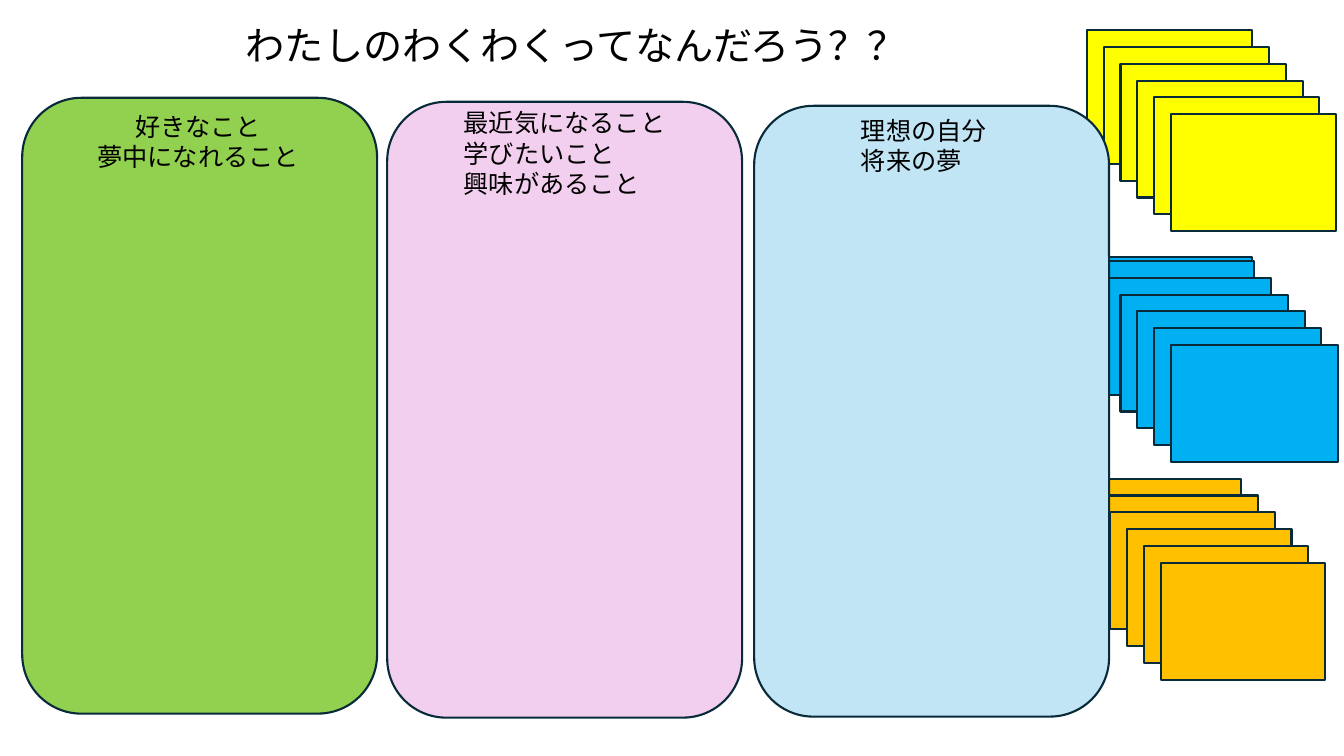
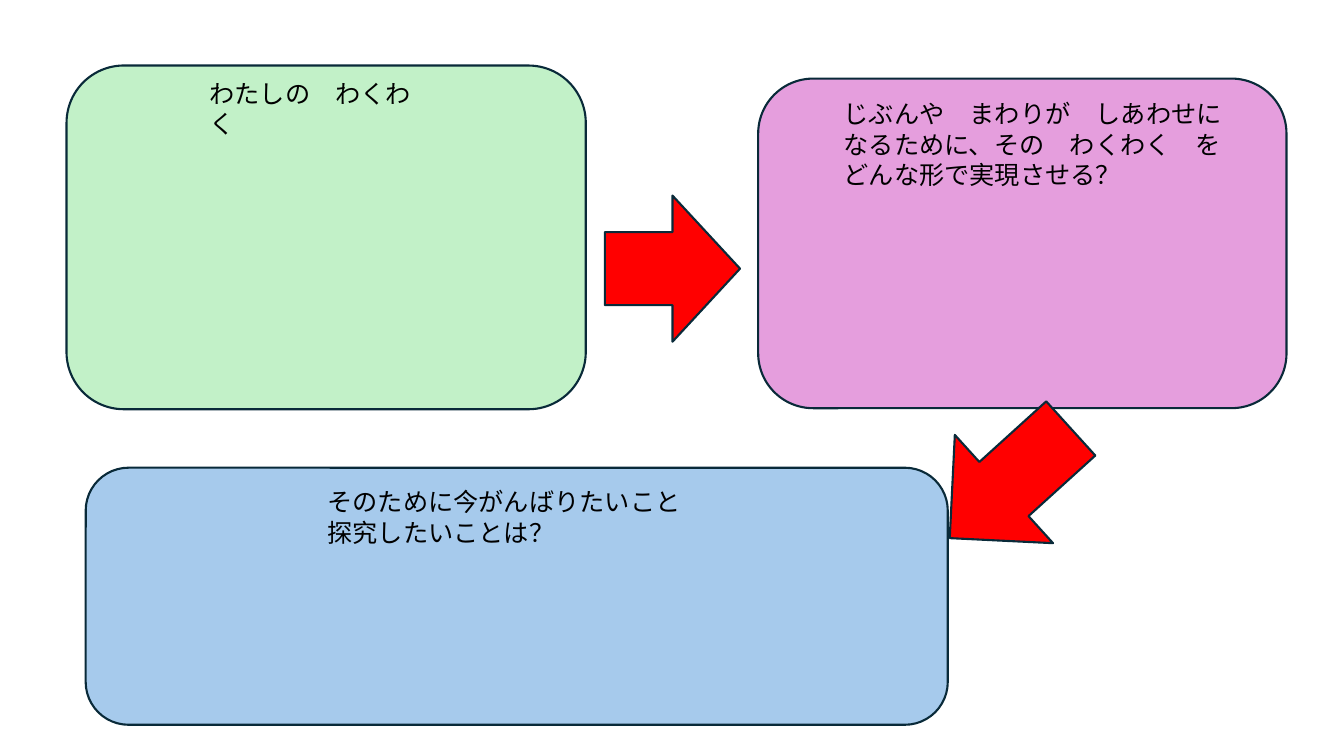
from dataclasses import dataclass

from lxml import etree
from pptx import Presentation
from pptx.dml.color import RGBColor
from pptx.enum import shapes, text
from pptx.oxml import ns
from pptx.util import Inches, Pt


@dataclass(frozen=True)
class Theme:
    font: str = "Noto Sans CJK JP"
    ink: str = "000000"
    outline: str = "092A39"
    outline_width: float = 1.5
    title_size: int = 28
    body_size: int = 18
    lime: str = "92D050"
    pink: str = "F2CFEE"
    sky: str = "C1E5F5"
    mint: str = "C2F1C8"
    orchid: str = "E59EDD"
    blue: str = "A6CAEC"
    arrow: str = "FF0000"
    yellow_card: str = "FFFF00"
    blue_card: str = "00B0F0"
    orange_card: str = "FFC000"


THEME = Theme()
PRESET = shapes.MSO_SHAPE
LEFT, CENTER = text.PP_ALIGN.LEFT, text.PP_ALIGN.CENTER


def add_outlined(slide, preset, box, fill, rotation=0):
    """Add a filled shape with the shared dark outline."""
    shape = slide.shapes.add_shape(preset, *map(Inches, box))
    shape.shadow.inherit = False
    shape.fill.solid()
    shape.fill.fore_color.rgb = RGBColor.from_string(fill)
    shape.line.color.rgb = RGBColor.from_string(THEME.outline)
    shape.line.width = Pt(THEME.outline_width)
    shape.rotation = rotation


def add_caption(slide, box, lines, size=THEME.body_size, align=LEFT):
    """Add wrapped text, one paragraph for each line."""
    frame = slide.shapes.add_textbox(*map(Inches, box)).text_frame
    frame.word_wrap = True
    frame.text = "\n".join(lines)
    for paragraph in frame.paragraphs:
        paragraph.alignment = align
        for run in paragraph.runs:
            run.font.name = THEME.font
            run.font.size = Pt(size)
            run.font.color.rgb = RGBColor.from_string(THEME.ink)
            # Japanese glyphs take the East Asian typeface
            east_asian = etree.SubElement(run.font._element, ns.qn("a:ea"))
            east_asian.set("typeface", THEME.font)


def add_panel(slide, box, fill, caption_box, lines, align=LEFT):
    """Add a rounded panel; caption_box is measured from its corner."""
    add_outlined(slide, PRESET.ROUNDED_RECTANGLE, box, fill)
    left, top, width, height = caption_box
    add_caption(slide, (box[0] + left, box[1] + top, width, height), lines, align=align)


def add_card_stack(slide, box, fill, count=6, step=1 / 6):
    """Add cards that step down and right from the first box."""
    left, top, width, height = box
    for index in range(count):
        shift = index * step
        add_outlined(slide, PRESET.RECTANGLE, (left + shift, top + shift, width, height), fill)


def build_interests(slide):
    # Card stacks, partly behind the right panel
    add_card_stack(slide, (10.78, 0.3, 1.64, 1.16), THEME.yellow_card)
    add_card_stack(slide, (10.76, 2.55, 1.66, 1.16), THEME.blue_card, count=1)
    add_card_stack(slide, (10.78, 2.59, 1.66, 1.16), THEME.blue_card)
    add_card_stack(slide, (10.68, 4.75, 1.63, 1.16), THEME.orange_card)

    # Three question panels
    add_panel(slide, (0.22, 0.97, 3.52, 6.11), THEME.lime, (0.47, 0.08, 2.55, 1.01),
              ["好きなこと", "夢中になれること"], CENTER)
    add_panel(slide, (3.84, 1.01, 3.52, 6.11), THEME.pink, (0.66, 0.01, 2.33, 1.01),
              ["最近気になること", "学びたいこと", "興味があること"])
    add_panel(slide, (7.48, 1.05, 3.52, 6.06), THEME.sky, (0.96, 0.04, 2.33, 0.71),
              ["理想の自分", "将来の夢"])

    # Title
    add_caption(slide, (2.34, 0.16, 7.27, 0.57),
                ["わたしのわくわくってなんだろう？？"], THEME.title_size)


def build_plan(slide):
    # From excitement to its realisation
    add_panel(slide, (0.66, 0.65, 5.15, 3.41), THEME.mint, (1.32, 0.08, 2.35, 0.4),
              ["わたしの　わくわく"])
    add_panel(slide, (7.52, 0.78, 5.24, 3.27), THEME.orchid, (0.75, 0.15, 4.03, 1.01),
              ["じぶんや　まわりが　しあわせになるために、その　わくわく　をどんな形で実現させる？"])

    # Arrows between the steps
    add_outlined(slide, PRESET.RIGHT_ARROW, (6, 1.94, 1.34, 1.45), THEME.arrow)
    add_outlined(slide, PRESET.RIGHT_ARROW, (9.21, 4.07, 1.62, 1.45), THEME.arrow, 137.8)

    # What to work on now
    add_panel(slide, (0.85, 4.64, 8.55, 2.55), THEME.blue, (2.3, 0.14, 4.28, 0.71),
              ["そのために今がんばりたいこと", "探究したいことは？"])


def main():
    deck = Presentation()
    deck.slide_width, deck.slide_height = Inches(13.33), Inches(7.5)
    blank = deck.slide_layouts[6]
    for build in (build_interests, build_plan):
        build(deck.slides.add_slide(blank))
    deck.save("out.pptx")


if __name__ == "__main__":
    main()
